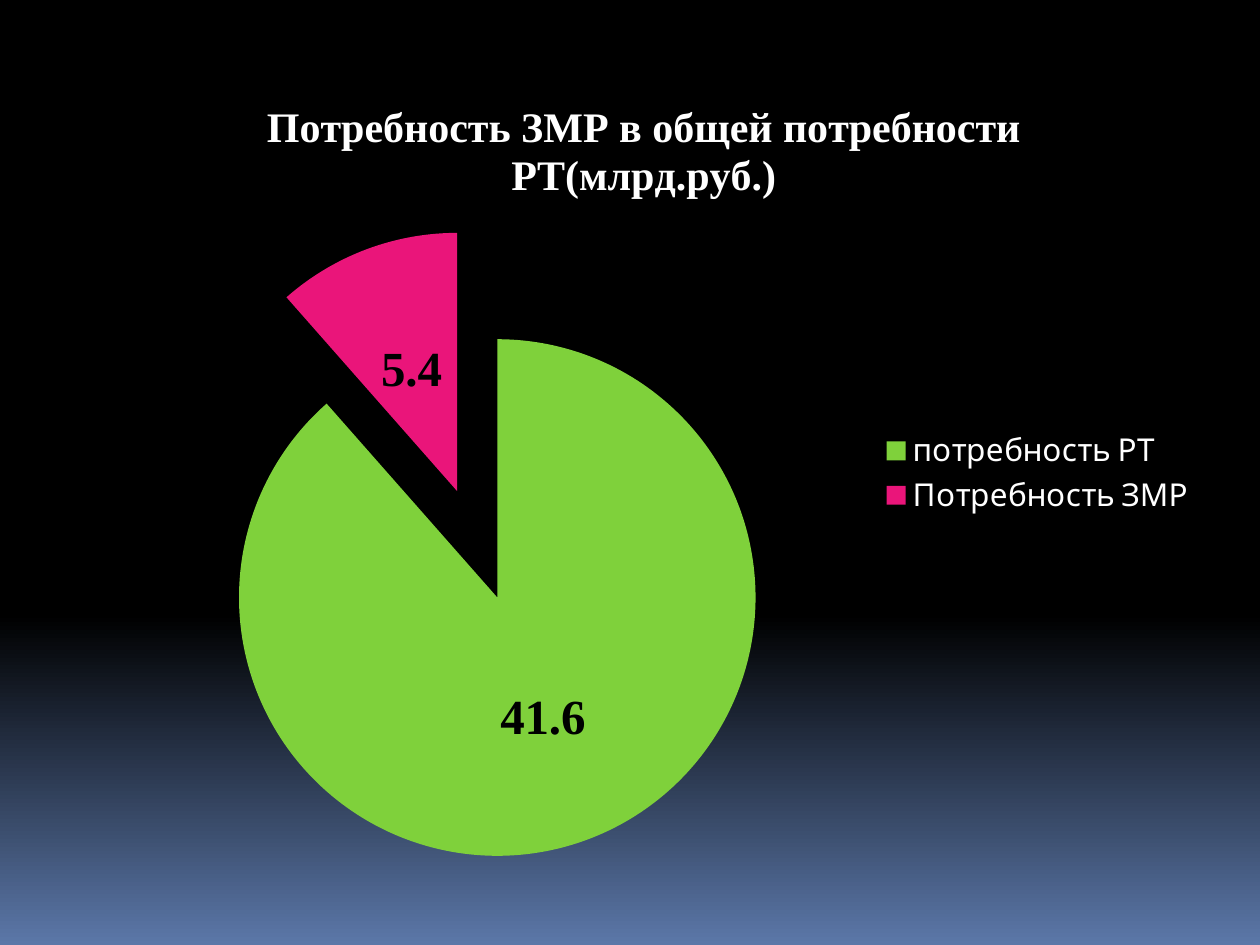
import copy

import pptx
import pptx.chart.data
import pptx.dml.color
import pptx.enum.chart
import pptx.oxml.ns
import pptx.util

Inches = pptx.util.Inches

BODY_FONT = "Cabin"
ACCENT_FONT = "Times New Roman"
WHITE = "FFFFFF"
BLACK = "000000"
BACKGROUND_STOPS = [(0, BLACK), (0.65, BLACK), (1, "5B77A8")]
NEEDS = [
    ("потребность РТ", 41.6, "7FD13B"),
    ("Потребность ЗМР", 5.4, "EA157A"),
]
EXPLOSION = 22


def rgb(color):
    return pptx.dml.color.RGBColor.from_string(color)


def format_font(font, size, color, name, bold=False):
    font.size = pptx.util.Pt(size)
    font.color.rgb = rgb(color)
    font.name = name
    font.bold = bold


def write_text(frame, text, **font_format):
    para = frame.paragraphs[0]
    span = para.add_run()
    span.text = text
    format_font(span.font, **font_format)


def paint_background(slide, stops):
    """Fill the slide with a gradient running from top to bottom."""
    fill = slide.background.fill
    fill.gradient()
    fill.gradient_angle = 270
    stop_list = slide.element.find(".//" + pptx.oxml.ns.qn("a:gsLst"))
    while len(stop_list) < len(stops):
        stop_list.append(copy.deepcopy(stop_list[0]))
    for stop, (position, color) in zip(fill.gradient_stops, stops):
        stop.position = position
        stop.color.rgb = rgb(color)


def explode_slices(series, percent):
    """Move every slice out from the centre by a percentage of the radius."""
    explosion = pptx.oxml.parse_xml(
        f'<c:explosion {pptx.oxml.ns.nsdecls("c")} val="{percent}"/>'
    )
    first_point = series.format and series.points[0].format and series._element.find(
        pptx.oxml.ns.qn("c:dPt")
    )
    if first_point is None:
        raise ValueError("Colour the slices before exploding them")
    first_point.addprevious(explosion)


def color_slices(series, colors):
    for index, color in enumerate(colors):
        fill = series.points[index].format.fill
        fill.solid()
        fill.fore_color.rgb = rgb(color)


def show_values(plot):
    plot.has_data_labels = True
    labels = plot.data_labels
    labels.show_value = True
    labels.show_percentage = False
    labels.position = pptx.enum.chart.XL_LABEL_POSITION.CENTER
    format_font(labels.font, size=28, color=BLACK, name=ACCENT_FONT, bold=True)


def add_pie(slide, title, needs, left, top, width, height):
    names, values, colors = zip(*needs)
    data = pptx.chart.data.CategoryChartData()
    data.categories = names
    data.add_series("Series 1", values)
    chart = slide.shapes.add_chart(
        pptx.enum.chart.XL_CHART_TYPE.PIE, left, top, width, height, data
    ).chart

    format_font(chart.font, size=18, color=WHITE, name=BODY_FONT)
    chart.has_title = True
    write_text(chart.chart_title.text_frame, title,
               size=24, color=WHITE, name=ACCENT_FONT, bold=True)
    chart.chart_title.include_in_layout = False

    chart.has_legend = True
    chart.legend.position = pptx.enum.chart.XL_LEGEND_POSITION.RIGHT
    chart.legend.include_in_layout = False

    plot = chart.plots[0]
    plot.vary_by_categories = True
    series = plot.series[0]
    color_slices(series, colors)
    explode_slices(series, EXPLOSION)
    show_values(plot)


def main():
    deck = pptx.Presentation()
    deck.slide_width = Inches(10)
    deck.slide_height = Inches(7.5)
    slide = deck.slides.add_slide(deck.slide_layouts[6])
    paint_background(slide, BACKGROUND_STOPS)
    add_pie(slide, "Потребность ЗМР в общей потребности РТ(млрд.руб.)", NEEDS,
            Inches(0.62), Inches(0.55), Inches(8.98), Inches(6.41))
    deck.save("out.pptx")


if __name__ == "__main__":
    main()
